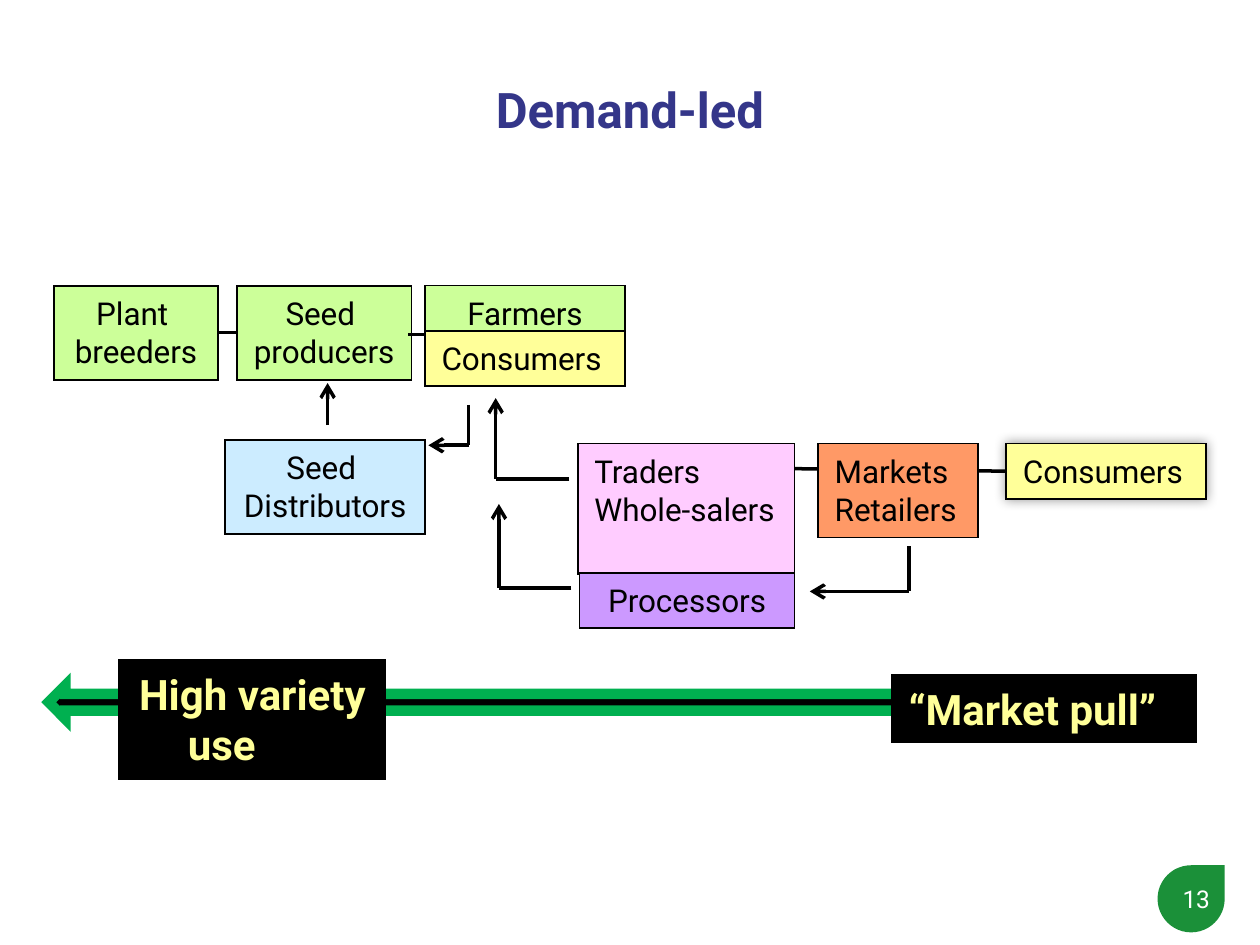
import pptx
import pptx.util
import pptx.dml.color
import pptx.enum.shapes
import pptx.enum.text
import pptx.oxml
import pptx.oxml.ns

RGBColor = pptx.dml.color.RGBColor
SHAPE = pptx.enum.shapes.MSO_SHAPE
STRAIGHT = pptx.enum.shapes.MSO_CONNECTOR.STRAIGHT
ALIGN = pptx.enum.text.PP_ALIGN
ANCHOR = pptx.enum.text.MSO_ANCHOR

BLACK = RGBColor(0x00, 0x00, 0x00)
WHITE = RGBColor(0xFF, 0xFF, 0xFF)
NAVY = RGBColor(0x34, 0x36, 0x89)
LIME = RGBColor(0xCC, 0xFF, 0x99)
YELLOW = RGBColor(0xFF, 0xFF, 0x99)
SKY = RGBColor(0xCC, 0xEC, 0xFF)
PINK = RGBColor(0xFF, 0xCC, 0xFF)
PURPLE = RGBColor(0xCC, 0x99, 0xFF)
ORANGE = RGBColor(0xFF, 0x99, 0x66)
ARROW_GREEN = RGBColor(0x00, 0xB0, 0x50)
PAGE_GREEN = RGBColor(0x1B, 0x90, 0x39)

FONT = "Roboto"
COLUMNS, ROWS = 100, 75  # square grid over the whole slide
SLIDE_WIDTH = pptx.util.Inches(7.5)
CELL = SLIDE_WIDTH // COLUMNS
SLIDE_HEIGHT = pptx.util.Emu(CELL * ROWS)
DRAWING = pptx.oxml.ns.nsdecls("a")


def cells(*counts):
    return [pptx.util.Emu(round(count * CELL)) for count in counts]


def place(region, part):
    """Turn a part given in cells within a region into slide lengths."""
    left, top, width, height = part
    return cells(region[0] + left, region[1] + top, width, height)


def set_font(para, size, color, bold=False):
    para.font.name = FONT
    para.font.size = pptx.util.Pt(size)
    para.font.bold = bold
    para.font.color.rgb = color


def add_block(page, region, part, kind, fill, line=BLACK, weight=0.75):
    block = page.shapes.add_shape(kind, *place(region, part))
    block.shadow.inherit = False
    block.fill.solid()
    block.fill.fore_color.rgb = fill
    if line is None:
        block.line.fill.background()
    else:
        block.line.color.rgb = line
        block.line.width = pptx.util.Pt(weight)
        block.line._get_or_add_ln().append(
            pptx.oxml.parse_xml(f'<a:miter {DRAWING} lim="800000"/>'))
    return block


def write(box, text, size, color, align, bold=False):
    frame = box.text_frame
    frame.word_wrap = True
    frame.vertical_anchor = ANCHOR.TOP
    frame.margin_left = pptx.util.Inches(0.05 if align == ALIGN.CENTER else 0.1)
    frame.margin_right = pptx.util.Inches(0.05)
    frame.text = text
    for para in frame.paragraphs:
        para.alignment = align
        set_font(para, size, color, bold)


def add_actor(page, region, text, part, fill, align=ALIGN.CENTER):
    actor = add_block(page, region, part, SHAPE.RECTANGLE, fill)
    write(actor, text, 13.5, BLACK, align)
    return actor


def add_path(page, region, points, arrow=False):
    """Draw straight lines through the points and return the last one."""
    for start, end in zip(points, points[1:]):
        ends = cells(region[0] + start[0], region[1] + start[1],
                     region[0] + end[0], region[1] + end[1])
        link = page.shapes.add_connector(STRAIGHT, *ends)
        link.line.color.rgb = BLACK
        link.line.width = pptx.util.Pt(1.5)
        link._element.spPr.append(pptx.oxml.parse_xml(f"<a:effectLst {DRAWING}/>"))
    if arrow:
        link.line._get_or_add_ln().append(
            pptx.oxml.parse_xml(f'<a:tailEnd {DRAWING} type="arrow"/>'))
    return link


def add_glow(block):
    effects = block._element.spPr.find(pptx.oxml.ns.qn("a:effectLst"))
    effects.append(pptx.oxml.parse_xml(
        f'<a:outerShdw {DRAWING} blurRad="63500" dist="0" dir="0">'
        '<a:srgbClr val="000000"><a:alpha val="40000"/></a:srgbClr></a:outerShdw>'))


def add_title(page, region):
    title = page.shapes.title
    title.left, title.top, title.width, title.height = cells(*region)
    title.text_frame.text = "Demand-led"
    title.text_frame.vertical_anchor = ANCHOR.MIDDLE
    para = title.text_frame.paragraphs[0]
    para.alignment = ALIGN.CENTER
    para.line_spacing = 0.9
    set_font(para, 21, NAVY, True)


def add_page_mark(page, region):
    add_block(page, region, (2.67, 0, 5.33, 5.33), SHAPE.TEAR, PAGE_GREEN, None)
    box = page.shapes.add_textbox(*place(region, (0, 0.8, 8.13, 3.73)))
    write(box, "13", 10.5, WHITE, ALIGN.RIGHT)
    box.text_frame.margin_right = pptx.util.Inches(0.1)


def add_chain(page, region):
    tall, low, wide = 7.47, 4.4, 15.87  # two-line and one-line heights, usual width
    second = 12.53                      # top of the second row

    # The market link lies behind the retailers
    buyers = add_actor(page, region, "Consumers", (75.6, second, wide, low), YELLOW, ALIGN.LEFT)
    add_glow(buyers)
    market_link = add_path(page, region, [(58.8, 14.53), (75.6, 14.73)])
    market_link.end_connect(buyers, 1)

    # Actors; \v breaks a line within a paragraph
    breeders = add_actor(page, region, "Plant \nbreeders", (0, 0, 13.07, tall), LIME)
    producers = add_actor(page, region, "Seed \vproducers", (14.53, 0, 13.87, tall), LIME)
    for text, part, fill, align in [
        ("Seed \vDistributors", (13.6, 12.27, wide, tall), SKY, ALIGN.CENTER),
        ("Farmers", (29.47, 0, wide, low), LIME, ALIGN.CENTER),
        ("Consumers", (29.47, 3.6, wide, low), YELLOW, ALIGN.LEFT),
        ("Traders\nWhole-salers", (41.6, second, 17.2, 10.4), PINK, ALIGN.LEFT),
        ("Processors", (41.73, 22.8, 17.07, low), PURPLE, ALIGN.CENTER),
        ("Markets\nRetailers", (60.67, second, 12.67, tall), ORANGE, ALIGN.LEFT),
    ]:
        add_actor(page, region, text, part, fill, align)

    # Plain links in the first row
    seed_link = add_path(page, region, [(13.07, 3.73), (14.53, 3.73)])
    seed_link.begin_connect(breeders, 3)
    seed_link.end_connect(producers, 1)
    add_path(page, region, [(28.13, 3.87), (29.47, 3.87)])

    # Arrows that carry demand back along the chain
    for points in [
        [(21.73, 11.07), (21.73, 7.73)],
        [(32.93, 9.47), (32.93, 12.67), (29.73, 12.67)],
        [(40.93, 15.33), (35.07, 15.33), (35.07, 8.93)],
        [(41.07, 24), (35.33, 24), (35.33, 17.33)],
        [(67.87, 20.67), (67.87, 24.27), (60, 24.27)],
    ]:
        add_path(page, region, points, arrow=True)


def add_pull_band(page, region):
    add_block(page, region, (0, 2, 90.27, 2.67), SHAPE.LEFT_ARROW, BLACK, ARROW_GREEN, 4.5)
    for text, part in [("“Market pull”", (66.93, 1.2, 24.13, 5.33)),
                       ("High variety use", (5.6, 0, 21.07, 9.47))]:
        label = add_block(page, region, part, SHAPE.RECTANGLE, BLACK)
        write(label, text, 18, YELLOW, ALIGN.LEFT, True)
    # Hanging layout: the wrapped word is set further in
    properties = label.text_frame.paragraphs[0]._p.get_or_add_pPr()
    properties.set("marL", str(pptx.util.Inches(0.31)))
    properties.set("indent", str(pptx.util.Inches(-0.29)))


def main():
    deck = pptx.Presentation()
    deck.slide_width, deck.slide_height = SLIDE_WIDTH, SLIDE_HEIGHT
    page = deck.slides.add_slide(deck.slide_layouts[5])
    add_page_mark(page, (89.2, 68.67))
    add_title(page, (2.67, 4, 94.67, 9.87))
    add_chain(page, (4.27, 22.67))
    add_pull_band(page, (3.87, 52.4))
    deck.save("out.pptx")


if __name__ == "__main__":
    main()
